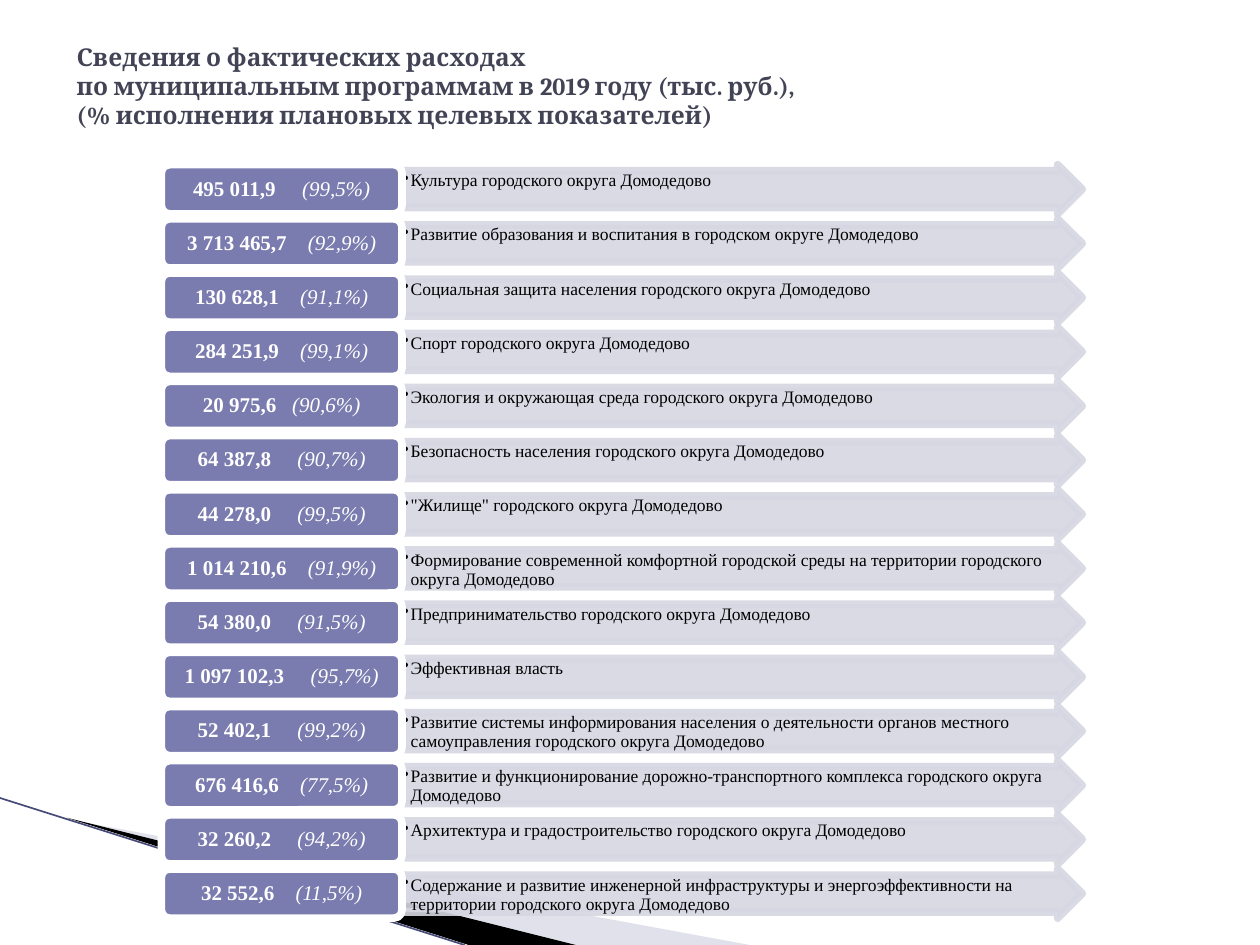
from pptx import Presentation
from pptx.dml.color import RGBColor
from pptx.enum.shapes import MSO_CONNECTOR, MSO_SHAPE
from pptx.enum.text import MSO_ANCHOR, PP_ALIGN
from pptx.oxml.ns import qn
from pptx.util import Pt
from lxml import etree

ARROW, ROUNDED = MSO_SHAPE.RIGHT_ARROW, MSO_SHAPE.ROUNDED_RECTANGLE
STRAIGHT = MSO_CONNECTOR.STRAIGHT
TOP, MIDDLE = MSO_ANCHOR.TOP, MSO_ANCHOR.MIDDLE
LEFT, CENTER = PP_ALIGN.LEFT, PP_ALIGN.CENTER

TITLE = ("Сведения о фактических расходах\v"
         "по муниципальным программам в 2019 году (тыс. руб.),\v"
         "(% исполнения плановых целевых показателей)")

# Amount, percentage, gap between them in points, programme
PROGRAMMES = [
    ("495 011,9", "(99,5%)", 15, "Культура городского округа Домодедово"),
    ("3 713 465,7", "(92,9%)", 12,
     "Развитие образования и воспитания в городском округе Домодедово"),
    ("130 628,1", "(91,1%)", 12,
     "Социальная защита населения городского округа Домодедово"),
    ("284 251,9", "(99,1%)", 12, "Спорт городского округа Домодедово"),
    ("20 975,6", "(90,6%)", 9,
     "Экология и окружающая среда городского округа Домодедово"),
    ("64 387,8", "(90,7%)", 15,
     "Безопасность населения городского округа Домодедово"),
    ("44 278,0", "(99,5%)", 15, '"Жилище" городского округа Домодедово'),
    ("1 014 210,6", "(91,9%)", 12,
     "Формирование современной комфортной городской среды на территории "
     "городского округа Домодедово"),
    ("54 380,0", "(91,5%)", 15,
     "Предпринимательство городского округа Домодедово"),
    ("1 097 102,3", "(95,7%)", 15, "Эффективная власть"),
    ("52 402,1", "(99,2%)", 15,
     "Развитие системы информирования населения о деятельности органов "
     "местного самоуправления городского округа Домодедово"),
    ("676 416,6", "(77,5%)", 12,
     "Развитие и функционирование дорожно-транспортного комплекса "
     "городского округа Домодедово"),
    ("32 260,2", "(94,2%)", 15,
     "Архитектура и градостроительство городского округа Домодедово"),
    ("32 552,6", "(11,5%)", 12,
     "Содержание и развитие инженерной инфраструктуры и "
     "энергоэффективности на территории городского округа Домодедово"),
]


def rgb(value):
    return RGBColor.from_string(value)


class Deck:
    serif, heading = "Times New Roman", "Cambria"
    dark, black, white = "424456", "000000", "FFFFFF"
    purple, pale, wedge_pale, wedge_line = "7A7BAE", "D7D7E3", "B6B6D1", "AFB0CC"
    outline = 4.33

    def __init__(self, slide):
        self.s = slide

    def paint(self, fill, color, opacity=100):
        fill.solid()
        fill.fore_color.rgb = rgb(color)
        if opacity < 100:
            clr = fill._xPr.find(".//" + qn("a:srgbClr"))
            etree.SubElement(clr, qn("a:alpha")).set("val", str(opacity * 1000))

    def format_font(self, font, color, **values):
        for name, value in values.items():
            setattr(font, name, value)
        font.color.rgb = rgb(color)

    def frame(self, sp, anchor, align, inset_x, inset_y):
        tf = sp.text_frame
        values = {"word_wrap": True, "vertical_anchor": anchor,
                  "margin_left": Pt(inset_x), "margin_right": Pt(inset_x),
                  "margin_top": Pt(inset_y), "margin_bottom": Pt(inset_y)}
        for name, value in values.items():
            setattr(tf, name, value)
        p = tf.paragraphs[0]
        p.alignment = align
        return p

    def wedge(self, points, color, opacity=100):
        points = [(Pt(x), Pt(y)) for x, y in points]
        builder = self.s.shapes.build_freeform(*points[0], scale=1.0)
        builder.add_line_segments(points[1:], close=True)
        sp = builder.convert_to_shape()
        sp.shadow.inherit = False
        sp.line.fill.background()
        self.paint(sp.fill, color, opacity)

    def line(self, x1, y1, x2, y2, color, width):
        c = self.s.shapes.add_connector(STRAIGHT, Pt(x1), Pt(y1), Pt(x2), Pt(y2))
        c.line.width = Pt(width)
        self.paint(c.line.fill, color)
        etree.SubElement(c._element.spPr, qn("a:effectLst"))

    def shape(self, kind, x, y, w, h, fill, line, opacity=100):
        sp = self.s.shapes.add_shape(kind, Pt(x), Pt(y), Pt(w), Pt(h))
        sp.shadow.inherit = False
        self.paint(sp.fill, fill, opacity)
        sp.line.width = Pt(self.outline)
        self.paint(sp.line.fill, line, opacity)
        return sp

    def programme(self, x, y, w, h, text):
        sp = self.shape(ARROW, x, y, w, h, self.pale, self.pale, 90)
        sp.adjustments[0], sp.adjustments[1] = 0.75, 0.5
        p = self.frame(sp, TOP, LEFT, 0.5, 0.5)
        p.line_spacing = 0.9
        pPr = p._p.get_or_add_pPr()
        pPr.set("marL", str(Pt(4.5)))
        pPr.set("indent", str(-Pt(4.5)))
        etree.SubElement(pPr, qn("a:buChar")).set("char", "•")
        r = p.add_run()
        r.text = text
        self.format_font(r.font, self.black, name=self.serif, size=Pt(10))

    def amount(self, x, y, w, h, value, share, gap):
        sp = self.shape(ROUNDED, x, y, w, h, self.purple, self.white)
        p = self.frame(sp, MIDDLE, CENTER, 3.6, 2)
        p.line_spacing = 0.9
        for text, bold in ((value, True), (" ", True), (share, False)):
            r = p.add_run()
            r.text = text
            self.format_font(r.font, self.white, name=self.serif, size=Pt(12),
                             bold=bold, italic=not bold)
            if text == " ":
                # A space is 3 pt wide; letter spacing makes up the rest
                r.font._element.set("spc", str((gap - 3) * 100))

    def title(self, x, y, w, h, text):
        sp = self.s.shapes.add_textbox(Pt(x), Pt(y), Pt(w), Pt(h))
        p = self.frame(sp, MIDDLE, LEFT, 7.2, 3.6)
        p.text = text
        for r in p.runs:
            self.format_font(r.font, self.dark, name=self.heading,
                             size=Pt(14), bold=True)


def main():
    prs = Presentation()
    prs.slide_width, prs.slide_height = Pt(720), Pt(540)
    deck = Deck(prs.slides.add_slide(prs.slide_layouts[6]))

    # Corner decoration
    deck.wedge([(39.6, 468.4), (428.4, 540), (328.3, 540)], deck.wedge_pale, 40)
    deck.wedge([(38.2, 467.3), (329, 540), (267.8, 540)], deck.black)
    deck.line(0, 456, 265.5, 540, "474B78", 0.95)

    # Programme rows
    top, pitch, height = 94.1, 30.96, 28.1
    for i, (value, share, gap, text) in enumerate(PROGRAMMES):
        y = top + i * pitch
        deck.programme(229.7, y, 388.8, height, text)
        deck.amount(92.2, y, 137.5, height, value, share, gap)

    # Title
    deck.title(36.7, 9.4, 652.3, 79.2, TITLE)

    prs.save("out.pptx")


if __name__ == "__main__":
    main()
